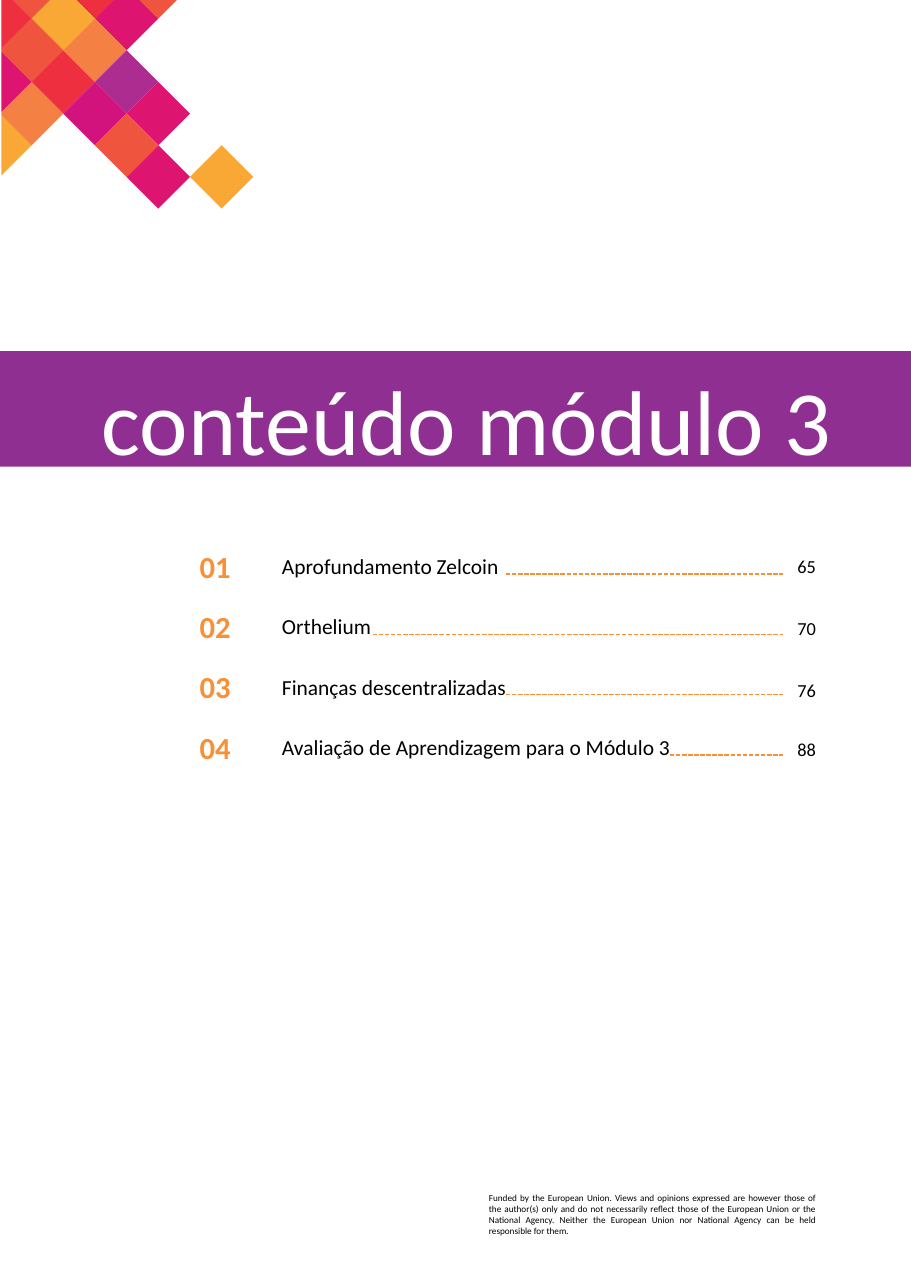
from lxml import etree
from pptx import Presentation
from pptx.dml.color import RGBColor
from pptx.enum.dml import MSO_LINE
from pptx.enum.shapes import MSO_CONNECTOR, MSO_SHAPE
from pptx.enum.text import MSO_ANCHOR, PP_ALIGN
from pptx.oxml.ns import qn
from pptx.util import Cm, Pt

DASH = MSO_LINE.SQUARE_DOT
STRAIGHT = MSO_CONNECTOR.STRAIGHT
RECT = MSO_SHAPE.RECTANGLE
TOP, MIDDLE = MSO_ANCHOR.TOP, MSO_ANCHOR.MIDDLE
LEFT, CENTER = PP_ALIGN.LEFT, PP_ALIGN.CENTER
RIGHT, JUSTIFY = PP_ALIGN.RIGHT, PP_ALIGN.JUSTIFY

BLACK = RGBColor(0x00, 0x00, 0x00)
WHITE = RGBColor(0xFF, 0xFF, 0xFF)
PURPLE = RGBColor(0x8E, 0x2F, 0x91)
ORANGE = RGBColor(0xF7, 0x90, 0x37)
RED = RGBColor(0xED, 0x2F, 0x40)
PINK = RGBColor(0xDD, 0x14, 0x70)
CORAL = RGBColor(0xEF, 0x54, 0x3F)
AMBER = RGBColor(0xF9, 0xA8, 0x35)
PEACH = RGBColor(0xF4, 0x80, 0x43)
VIOLET = RGBColor(0xAC, 0x2C, 0x90)
ROSE = RGBColor(0xD3, 0x13, 0x7D)

FONT = "Calibri"
STEP = 0.73
TILES = [
    (3, -1, RED), (4, 0, PINK), (5, -1, CORAL), (2, 0, AMBER),
    (1, 1, CORAL), (2, 2, RED), (3, 1, PEACH), (0, 2, PINK),
    (0, 4, AMBER), (1, 3, PEACH), (7, 5, AMBER), (5, 5, PINK),
    (5, 3, PINK), (4, 2, VIOLET), (3, 3, ROSE), (4, 4, CORAL),
    (1, -1, CORAL), (0, 0, RED),
]
ROWS = [
    ("01", "Aprofundamento Zelcoin", "65", 11.66, 0),
    ("02", "Orthelium", "70", 8.59, 0.05),
    ("03", "Finanças descentralizadas", "76", 11.66, 0.08),
    ("04", "Avaliação de Aprendizagem para o Módulo 3", "88", 15.44, 0.05),
]
NOTICE = (
    "Funded by the European Union. Views and opinions expressed are however "
    "those of the author(s) only and do not necessarily reflect those of the "
    "European Union or the National Agency. Neither the European Union nor "
    "National Agency can be held responsible for them."
)


def add_text(slide, box, text, size, color=BLACK, align=LEFT, anchor=MIDDLE, bold=False):
    """Place one paragraph of text in a box given in centimetres."""
    frame = slide.shapes.add_textbox(*map(Cm, box)).text_frame
    frame.word_wrap = True
    frame.vertical_anchor = anchor
    frame.text = text
    para = frame.paragraphs[0]
    para.alignment = align
    font = para.runs[0].font
    font.name, font.size, font.bold = FONT, Pt(size), bold
    font.color.rgb = color


def clip(points, axis, limit):
    """Cut a polygon so that every point lies at or past the limit on an axis."""
    kept = []
    for start, end in zip(points, points[1:] + points[:1]):
        if start[axis] >= limit:
            kept.append(start)
        if (start[axis] >= limit) != (end[axis] >= limit):
            part = (limit - start[axis]) / (end[axis] - start[axis])
            kept.append(tuple(a + part * (b - a) for a, b in zip(start, end)))
    return kept


def add_tiles(slide, left, top):
    """Lay the coloured diamonds on a lattice, cut at the page corner."""
    for col, row, color in TILES:
        x, y = left + col * STEP, top + row * STEP
        points = [(x, y - STEP), (x + STEP, y), (x, y + STEP), (x - STEP, y)]
        points = clip(clip(points, 0, 0.03), 1, 0)
        marks = [(Cm(a), Cm(b)) for a, b in points]
        path = slide.shapes.build_freeform(*marks[0])
        path.add_line_segments(marks[1:], close=True)
        tile = path.convert_to_shape()
        tile.shadow.inherit = False
        tile.fill.solid()
        tile.fill.fore_color.rgb = color
        tile.line.fill.background()


def add_band(slide, left, top, width, height):
    """Draw the title band with its heading."""
    band = slide.shapes.add_shape(RECT, *map(Cm, (left, top, width, height)))
    band.shadow.inherit = False
    band.fill.solid()
    band.fill.fore_color.rgb = PURPLE
    band.line.fill.background()
    box = (left + 2.1, top + 0.17, 17.78, 2.69)
    add_text(slide, box, "conteúdo módulo 3", 60, WHITE, anchor=TOP)


def add_list(slide, left, top, width, pitch):
    """Write the contents rows with dashed leaders and page numbers."""
    high = 0.97
    for index, (number, title, page, start, drop) in enumerate(ROWS):
        y = top + index * pitch
        add_text(slide, (left, y, 1.8, high), number, 20, ORANGE, CENTER, bold=True)
        add_text(slide, (left + 2.19, y, 11.05, high), title, 14)
        edge = left + width
        add_text(slide, (edge - 1.27, y + drop, 1.27, high), page, 12, align=RIGHT)
        ends = (start, y + 0.67, edge - 1.01, y + 0.67)
        leader = slide.shapes.add_connector(STRAIGHT, *map(Cm, ends))
        leader.line.color.rgb = ORANGE
        leader.line.width = Pt(1)
        leader.line.dash_style = DASH
        etree.SubElement(leader.element.spPr, qn("a:effectLst"))


def main():
    """Build the contents page and save it."""
    deck = Presentation()
    deck.slide_width, deck.slide_height = Cm(21), Cm(29.7)
    slide = deck.slides.add_slide(deck.slide_layouts[6])
    add_band(slide, 0, 8.1, 21, 2.66)
    add_text(slide, (11.02, 27.36, 8.03, 1.27), NOTICE, 6, align=JUSTIFY, anchor=TOP)
    add_tiles(slide, 0, 0.43)
    add_list(slide, 4.06, 12.57, 15, 1.39)
    deck.save("out.pptx")


if __name__ == "__main__":
    main()
